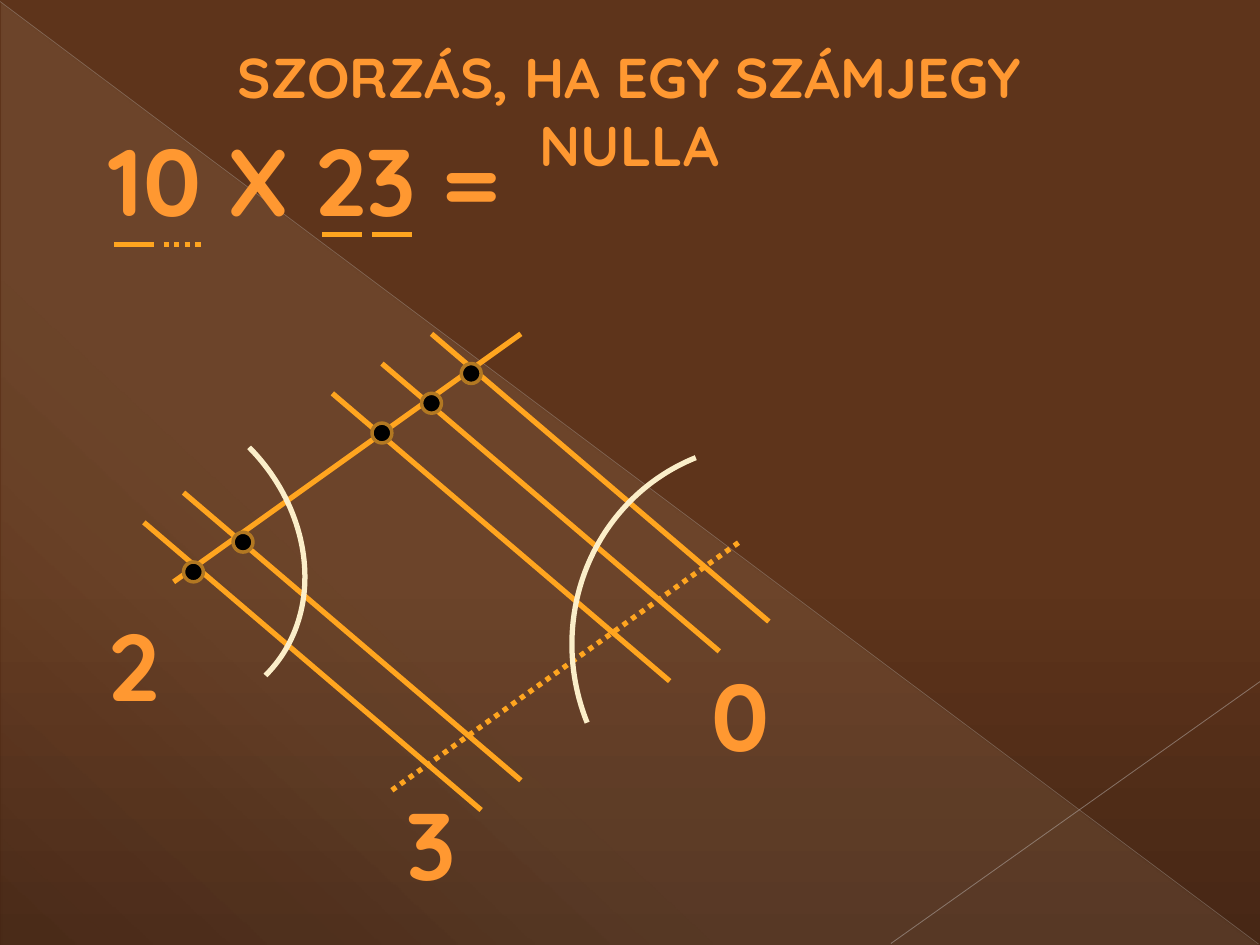
from dataclasses import dataclass

import lxml.etree
import pptx
import pptx.dml.color
import pptx.enum.dml
import pptx.enum.shapes
import pptx.enum.text
import pptx.oxml
import pptx.oxml.ns
import pptx.util

Cm = pptx.util.Cm
Pt = pptx.util.Pt
qn = pptx.oxml.ns.qn
PRESET = pptx.enum.shapes.MSO_SHAPE
DOTTED = pptx.enum.dml.MSO_LINE.ROUND_DOT


@dataclass(frozen=True)
class Theme:
    font: str = "Quicksand"
    title_size: int = 32
    digit_size: int = 54
    text: str = "FF9831"
    stick: str = "FFA51F"
    cream: str = "FBEEC9"
    dot: str = "000000"
    dot_edge: str = "B27822"
    ground: str = "5E341B"
    ground_dark: str = "472715"
    long_edge: str = "BCB7B4"
    short_edge: str = "C4BFBD"


THEME = Theme()


def rgb(color):
    return pptx.dml.color.RGBColor.from_string(color)


def add_text(page, text, left, top, width, height, size=THEME.digit_size,
             color=THEME.text, wrap=False):
    box = page.shapes.add_textbox(Cm(left), Cm(top), Cm(width), Cm(height))
    box.text_frame.word_wrap = wrap
    para = box.text_frame.paragraphs[0]
    para.alignment = pptx.enum.text.PP_ALIGN.CENTER
    span = para.add_run()
    span.text = text
    span.font.name = THEME.font
    span.font.size = Pt(size)
    span.font.bold = True
    span.font.color.rgb = rgb(color)


def add_line(page, start, delta, color=THEME.stick, width=3, dash=None, opacity=100):
    """Draw a line from start, running by delta, both (x, y) in centimetres."""
    (x, y), (dx, dy) = start, delta
    line = page.shapes.add_connector(
        pptx.enum.shapes.MSO_CONNECTOR.STRAIGHT, Cm(x), Cm(y), Cm(x + dx), Cm(y + dy))
    line.line.color.rgb = rgb(color)
    line.line.width = Pt(width)
    if dash is not None:
        line.line.dash_style = dash
    properties = line._element.spPr
    if opacity < 100:
        tint = properties.find(".//" + qn("a:srgbClr"))
        lxml.etree.SubElement(tint, qn("a:alpha"), val=str(opacity * 1000))
    lxml.etree.SubElement(properties, qn("a:effectLst"))


def add_preset(page, kind, left, top, width, height):
    shape = page.shapes.add_shape(kind, Cm(left), Cm(top), Cm(width), Cm(height))
    shape.shadow.inherit = False
    return shape


def add_arc(page, left, top, width, height, rotation):
    arc = add_preset(page, PRESET.ARC, left, top, width, height)
    arc.rotation = rotation
    arc.fill.background()
    arc.line.color.rgb = rgb(THEME.cream)
    arc.line.width = Pt(3)


def add_dot(page, left, top, size=0.4):
    dot = add_preset(page, PRESET.OVAL, left, top, size, size)
    dot.fill.solid()
    dot.fill.fore_color.rgb = rgb(THEME.dot)
    dot.line.color.rgb = rgb(THEME.dot_edge)
    dot.line.width = Pt(2)


def add_sheen(page):
    """Lay the translucent triangle over the lower left half."""
    sheen = add_preset(page, PRESET.RIGHT_TRIANGLE, 0.03, 0.05, 25.35, 19)
    sheen.line.fill.background()
    stops = "".join(
        f'<a:gs pos="{place * 1000}"><a:srgbClr val="{THEME.cream}">'
        f'<a:alpha val="{opacity * 1000}"/></a:srgbClr></a:gs>'
        for place, opacity in ((0, 10), (70, 8), (100, 1)))
    gradient = pptx.oxml.parse_xml(
        f'<a:gradFill {pptx.oxml.ns.nsdecls("a")} rotWithShape="1">'
        f'<a:gsLst>{stops}</a:gsLst><a:lin ang="{133 * 60000}" scaled="0"/></a:gradFill>')
    sheen._element.spPr.find(qn("a:prstGeom")).addnext(gradient)


def paint_background(page):
    fill = page.background.fill
    fill.gradient()
    fill.gradient_angle = 270
    colors = ((0.6, THEME.ground), (1, THEME.ground_dark))
    for stop, (place, color) in zip(fill.gradient_stops, colors):
        stop.position = place
        stop.color.rgb = rgb(color)
    add_sheen(page)
    add_line(page, (0, 0.03), (25.37, 19), THEME.long_edge, 0.39, opacity=35)
    add_line(page, (25.4, 13.74), (-7.44, 5.28), THEME.short_edge, 0.47, opacity=45)


def draw_sticks(page):
    """Draw one stick per unit of each digit; a dotted stick stands for zero."""
    rising, falling = (7, -5), (6.8, 5.8)
    add_line(page, (3.5, 11.73), rising)
    add_line(page, (7.9, 15.93), rising, dash=DOTTED)
    for start in ((3.7, 9.93), (2.9, 10.53), (6.7, 7.93), (7.7, 7.33), (8.7, 6.73)):
        add_line(page, start, falling)
    for x, y, dash in ((2.3, 4.93, None), (3.3, 4.93, DOTTED),
                       (6.5, 4.73, None), (7.5, 4.73, None)):
        add_line(page, (x, y), (0.8, 0), dash=dash)


def main():
    deck = pptx.Presentation()
    deck.slide_width, deck.slide_height = Cm(25.4), Cm(19.05)
    page = deck.slides.add_slide(deck.slide_layouts[6])
    paint_background(page)

    add_text(page, "10 X 23 =", 1.7, 2.34, 8.89, 2.57)
    draw_sticks(page)
    add_arc(page, -0.61, 8.13, 7, 6, 45.3)
    add_arc(page, 11.43, 9.04, 8.28, 8.05, 248.1)
    for left, top in ((3.7, 11.33), (4.7, 10.73), (7.5, 8.53), (8.5, 7.93), (9.3, 7.33)):
        add_dot(page, left, top)
    for digit, left, top in (("2", 1.9, 12.12), ("3", 7.9, 15.72), ("0", 14.1, 13.13)):
        add_text(page, digit, left, top, 1.6, 2.57)
    add_text(page, "SZORZÁS, HA EGY SZÁMJEGY NULLA", 2.67, 0.74, 20.04, 1.63,
             size=THEME.title_size, wrap=True)
    deck.save("out.pptx")


if __name__ == "__main__":
    main()
